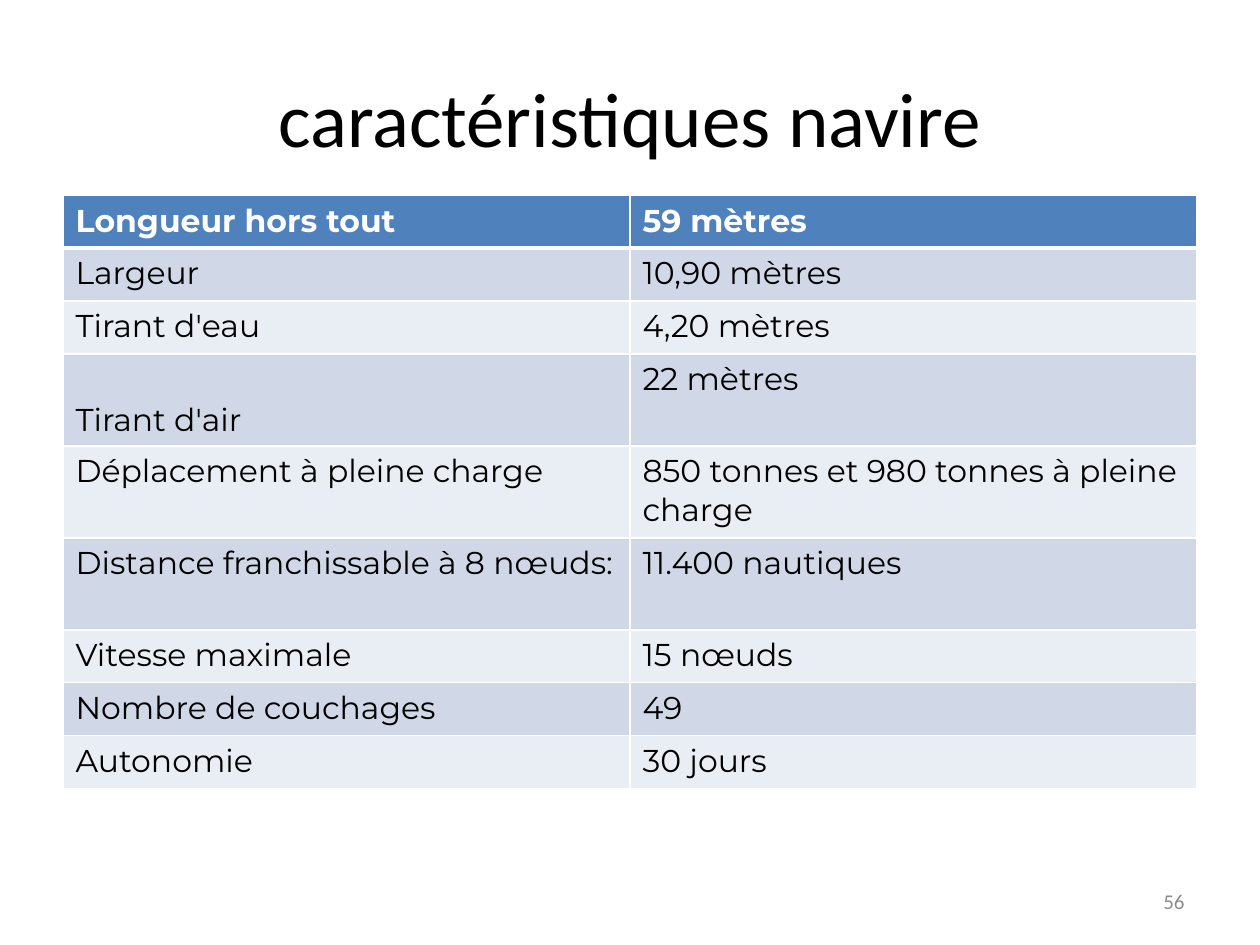
"""Build a slide with a table of ship characteristics."""
import lxml.etree
import pptx
import pptx.dml.color
import pptx.enum.text
import pptx.oxml.ns
import pptx.util

Inches = pptx.util.Inches
Pt = pptx.util.Pt
ALIGN = pptx.enum.text.PP_ALIGN
ANCHOR = pptx.enum.text.MSO_ANCHOR
qn = pptx.oxml.ns.qn


def paint(target, color):
    if hasattr(target, "solid"):
        target.solid()
        target = target.fore_color
    target.rgb = pptx.dml.color.RGBColor.from_string(color)


def write(frame, text, size, font, color, align=ALIGN.LEFT, bold=False):
    para = frame.paragraphs[0]
    para.alignment = align
    span = para.add_run()
    span.text = text
    span.font.size = Pt(size)
    span.font.name = font
    span.font.bold = bold
    paint(span.font.color, color)


deck = pptx.Presentation()
deck.slide_width = Inches(10)
deck.slide_height = Inches(7.5)
page = deck.slides.add_slide(deck.slide_layouts[6])

labels = [
    ("caractéristiques navire", 0.5, 0.3, 9, 1.25, 44, "000000", ALIGN.CENTER),
    ("56", 7.17, 6.95, 2.33, 0.4, 12, "8C8C8C", ALIGN.RIGHT),
]
for text, left, top, width, height, size, color, align in labels:
    box = page.shapes.add_textbox(Inches(left), Inches(top), Inches(width), Inches(height))
    box.text_frame.word_wrap = True
    box.text_frame.vertical_anchor = ANCHOR.MIDDLE
    write(box.text_frame, text, size, "Calibri", color, align)

characteristics = [
    ("Longueur hors tout", "59 mètres", 0.42),
    ("Largeur", "10,90 mètres", 0.42),
    ("Tirant d'eau", "4,20 mètres", 0.42),
    ("Tirant d'air", "22 mètres", 0.73),
    ("Déplacement à pleine charge", "850 tonnes et 980 tonnes à pleine charge", 0.73),
    ("Distance franchissable à 8 nœuds:", "11.400 nautiques", 0.73),
    ("Vitesse maximale", "15 nœuds", 0.42),
    ("Nombre de couchages", "49", 0.42),
    ("Autonomie", "30 jours", 0.42),
]
total_height = sum(height for name, value, height in characteristics)
table = page.shapes.add_table(
    len(characteristics), 2, Inches(0.5), Inches(1.55), Inches(9), Inches(total_height)
).table

for row, (name, value, height) in enumerate(characteristics):
    table.rows[row].height = Inches(height)
    header = row == 0
    fill = "4F81BD" if header else ("E9EDF4", "D0D8E8")[row % 2]
    for column, text in enumerate((name, value)):
        cell = table.cell(row, column)
        write(cell.text_frame, text, 18, "Montserrat", "FFFFFF" if header else "000000", bold=header)
        properties = cell._tc.get_or_add_tcPr()
        for side in "LRTB":
            thick = (row, side) in ((0, "B"), (1, "T"))
            line = lxml.etree.SubElement(properties, qn(f"a:ln{side}"), w=str(Pt(3 if thick else 1)))
            solid = lxml.etree.SubElement(line, qn("a:solidFill"))
            lxml.etree.SubElement(solid, qn("a:srgbClr"), val="FFFFFF")
        paint(cell.fill, fill)
        if text == "Tirant d'air":
            cell.vertical_anchor = ANCHOR.BOTTOM

deck.save("out.pptx")
